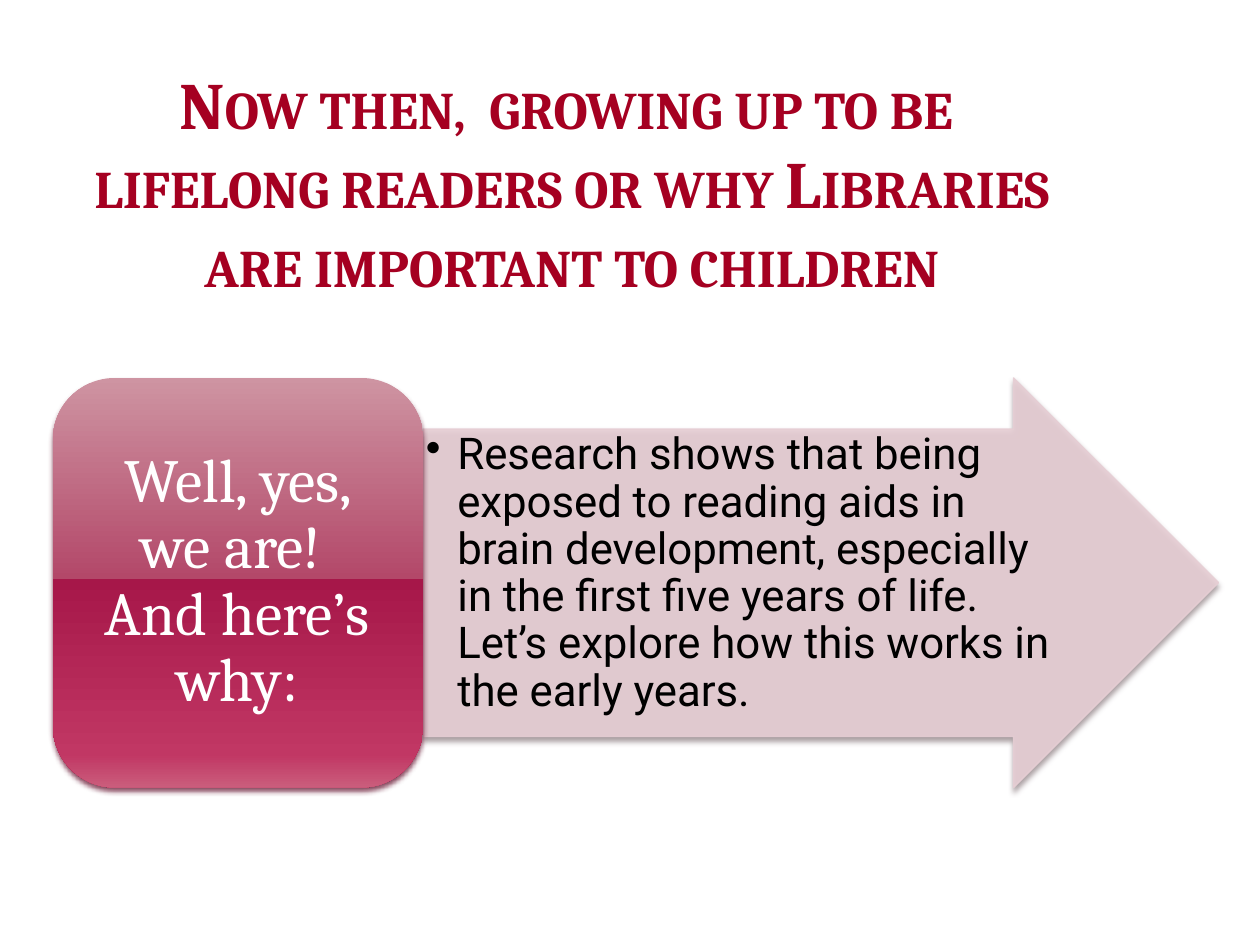
from lxml import etree
from pptx import Presentation
from pptx.dml.color import RGBColor
from pptx.enum.shapes import MSO_SHAPE
from pptx.enum.text import MSO_ANCHOR, PP_ALIGN
from pptx.oxml.ns import qn
from pptx.util import Inches, Pt

ARROW = MSO_SHAPE.RIGHT_ARROW
ROUNDED = MSO_SHAPE.ROUNDED_RECTANGLE
TOP, MIDDLE = MSO_ANCHOR.TOP, MSO_ANCHOR.MIDDLE
LEFT, CENTER = PP_ALIGN.LEFT, PP_ALIGN.CENTER

ARROW_COLOR = "E6CED4"
OPACITY = 90
CARD_STOPS = [(0, "CE94A2"), (49, "B34869"), (49, "A61749"),
              (92, "C13764"), (100, "CA5D7C")]


def color(value):
    return RGBColor.from_string(value)


def add_child(parent, tag, **attributes):
    child = etree.SubElement(parent, qn(tag))
    for name, value in attributes.items():
        child.set(name, str(value))
    return child


def add_shape(page, kind, left, top, width, height, shadow_color):
    """Add a preset shape with a soft shadow below it."""
    shape = page.shapes.add_shape(kind, Inches(left), Inches(top),
                                  Inches(width), Inches(height))
    shape.shadow.inherit = False
    effects = shape._element.spPr.find(qn("a:effectLst"))
    shadow = add_child(effects, "a:outerShdw", blurRad=Pt(3.1), dist=Pt(2),
                       dir=90 * 60000, rotWithShape=0)
    tint = add_child(shadow, "a:srgbClr", val=shadow_color)
    add_child(tint, "a:alpha", val=83000)
    return shape


def fill_translucent(shape, value, opacity):
    """Give the fill and the line one see-through colour."""
    shape.fill.solid()
    shape.fill.fore_color.rgb = color(value)
    shape.line.width = Pt(0.9)
    shape.line.color.rgb = color(value)
    for tint in shape._element.spPr.findall(".//" + qn("a:solidFill") + "/" + qn("a:srgbClr")):
        add_child(tint, "a:alpha", val=opacity * 1000)


def fill_gradient(shape, stops):
    """Fill from top to bottom through the given stops, with no line."""
    shape.fill.gradient()
    shape.fill.gradient_angle = 270
    stop_list = shape._element.spPr.find(".//" + qn("a:gsLst"))
    for old_stop in list(stop_list):
        stop_list.remove(old_stop)
    for position, value in stops:
        stop = add_child(stop_list, "a:gs", pos=position * 1000)
        add_child(stop, "a:srgbClr", val=value)
    shape.line.fill.background()


def add_text(page, text, left, top, width, height, font, size, value,
             margins, align=CENTER, anchor=TOP, spacing=1.0, bullet_indent=0):
    """Add a one-paragraph text box and return its run."""
    box = page.shapes.add_textbox(Inches(left), Inches(top),
                                  Inches(width), Inches(height))
    frame = box.text_frame
    frame.word_wrap = True
    frame.vertical_anchor = anchor
    side, edge = margins
    frame.margin_left = frame.margin_right = Inches(side)
    frame.margin_top = frame.margin_bottom = Inches(edge)
    frame.text = text
    para = frame.paragraphs[0]
    para.alignment = align
    para.line_spacing = spacing
    if bullet_indent:
        properties = para._p.get_or_add_pPr()
        properties.set("marL", str(Inches(bullet_indent)))
        properties.set("indent", str(-Inches(bullet_indent)))
        add_child(properties, "a:buChar", char="•")
    span = para.runs[0]
    span.font.name = font
    span.font.size = Pt(size)
    span.font.color.rgb = color(value)
    return span


def main():
    deck = Presentation()
    deck.slide_width, deck.slide_height = Inches(10), Inches(7.5)
    page = deck.slides.add_slide(deck.slide_layouts[6])

    # Arrow with the explanation
    arrow = add_shape(page, ARROW, 3.36, 3, 6.31, 3.25, "8E7F83")
    arrow.adjustments[0] = 0.75
    arrow.adjustments[1] = 0.5
    fill_translucent(arrow, ARROW_COLOR, OPACITY)
    add_text(page, "Research shows that being exposed to reading aids in brain "
             "development, especially in the first five years of life. "
             "Let’s explore how this works in the early years.",
             3.36, 3.41, 5.09, 2.44, "Roboto", 25, "000000", (0.02, 0.02),
             align=LEFT, spacing=0.9, bullet_indent=0.25)

    # Card with the answer
    card = add_shape(page, ROUNDED, 0.42, 3, 2.94, 3.25, "722640")
    fill_gradient(card, CARD_STOPS)
    add_text(page, "Well, yes, we are!  And here’s why:",
             0.56, 3.14, 2.65, 2.96, "Cambria", 35, "FFFFFF", (0.15, 0.07),
             anchor=MIDDLE, spacing=0.9)

    # Title
    title = add_text(page, "Now then,  growing up to be  lifelong readers or why "
                     "Libraries are important to children",
                     0.5, 0.5, 8.08, 1.17, "Cambria", 37.8, "A50021", (0.05, 0))
    title.font.bold = True
    title._r.get_or_add_rPr().set("cap", "small")

    deck.save("out.pptx")


if __name__ == "__main__":
    main()
